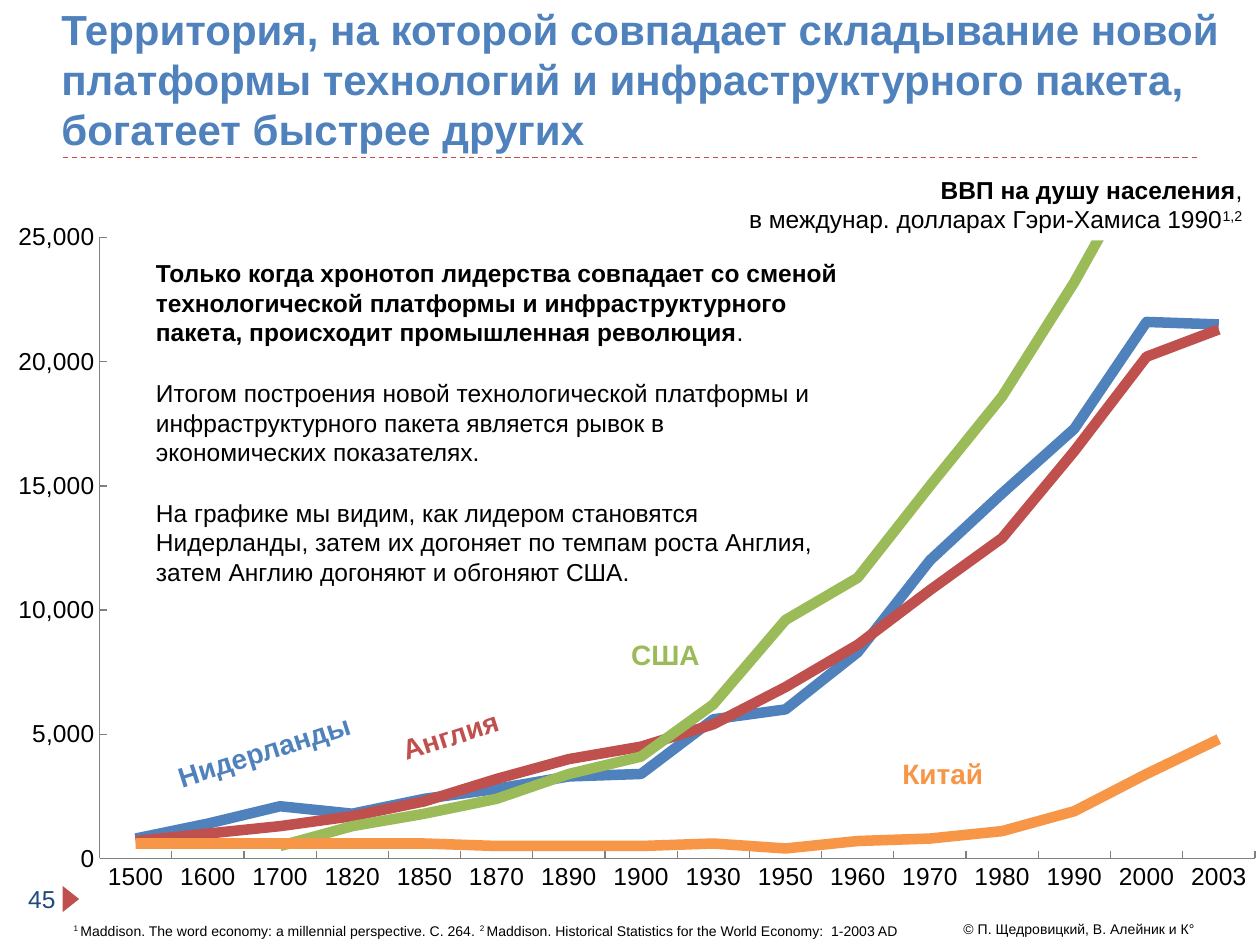
import pptx
import pptx.chart.data
import pptx.dml.color
import pptx.enum.chart
import pptx.enum.dml
import pptx.enum.shapes
import pptx.enum.text
import pptx.oxml
import pptx.oxml.ns
import pptx.util

Pt = pptx.util.Pt
ALIGN = pptx.enum.text.PP_ALIGN
ANCHOR = pptx.enum.text.MSO_ANCHOR
SHAPES = pptx.enum.shapes.MSO_SHAPE
FONT = "Arial"
BLUE, RED, GREEN, ORANGE = "4F81BD", "C0504D", "9BBB59", "F79646"
BLACK, WHITE, NAVY, GREY = "000000", "FFFFFF", "1F497D", "808080"

YEARS = ["1500", "1600", "1700", "1820", "1850", "1870", "1890", "1900",
         "1930", "1950", "1960", "1970", "1980", "1990", "2000", "2003"]
COUNTRIES = [
    ("Нидерланды", BLUE, (87, 415.5, 127.5, 26.5), -17.8,
     [800, 1400, 2100, 1800, 2400, 2800, 3300, 3400,
      5600, 6000, 8300, 12000, 14700, 17300, 21600, 21500]),
    ("Англия", RED, (214.5, 407, 85.5, 26.5), -17.7,
     [700, 1000, 1300, 1700, 2300, 3200, 4000, 4500,
      5400, 6900, 8600, 10800, 12900, 16400, 20200, 21300]),
    ("США", GREEN, (337.5, 361, 85.5, 26.5), 0,
     [None, None, 500, 1300, 1800, 2400, 3400, 4100,
      6200, 9600, 11300, 15000, 18600, 23200, 28400, 29000]),
    ("Китай", ORANGE, (496, 428.5, 85.5, 26.5), 0,
     [600, 600, 600, 600, 600, 500, 500, 500,
      600, 400, 700, 800, 1100, 1900, 3400, 4800]),
]


def colour(value):
    """Return the colour for a hex string."""
    return pptx.dml.color.RGBColor.from_string(value)


def apply(target, formats):
    """Set each attribute named in formats on target."""
    for name, value in formats.items():
        setattr(target, name, value)


def add_text(page, box, paragraphs, size, color=BLACK, bold=False, fill=None,
             align=ALIGN.LEFT, anchor=ANCHOR.TOP, after=0, rotation=0, frame_formats=None):
    """Add a text box; each paragraph is a list of (text, formats) spans."""
    shape = page.shapes.add_textbox(*map(Pt, box))
    shape.rotation = rotation
    if fill:
        shape.fill.solid()
        shape.fill.fore_color.rgb = colour(fill)
    frame = shape.text_frame
    apply(frame, {"word_wrap": True, "vertical_anchor": anchor, **(frame_formats or {})})
    for index, spans in enumerate(paragraphs):
        para = frame.paragraphs[0] if index == 0 else frame.add_paragraph()
        apply(para, {"alignment": align, "space_after": Pt(after)})
        for text, formats in spans:
            span = para.add_run()
            span.text = text
            apply(span.font, {"name": FONT, "size": Pt(size), "bold": formats.get("bold", bold)})
            span.font.color.rgb = colour(color)
            if formats.get("raised"):
                span.font._element.set("baseline", "30000")


def add_header(page, box):
    """Place the title and the dashed rule under it."""
    left, top, width, height = box
    title = ("Территория, на которой совпадает складывание новой платформы технологий "
             "и инфраструктурного пакета, богатеет быстрее других")
    add_text(page, box, [[(title, {})]], 24, BLUE, True, anchor=ANCHOR.MIDDLE)
    rule = page.shapes.add_connector(
        pptx.enum.shapes.MSO_CONNECTOR.STRAIGHT,
        Pt(left + 8), Pt(top + height), Pt(left + 656), Pt(top + height))
    apply(rule.line, {"width": Pt(0.75), "dash_style": pptx.enum.dml.MSO_LINE.DASH})
    rule.line.color.rgb = colour(RED)
    rule._element.spPr.append(pptx.oxml.parse_xml(
        f'<a:effectLst {pptx.oxml.ns.nsdecls("a")}/>'))


def set_plot_layout(chart, x, y, width, height):
    """Fix the inner plot area as fractions of the chart."""
    plot_area = chart._chartSpace.chart.plotArea
    for old in plot_area.findall(pptx.oxml.ns.qn("c:layout")):
        plot_area.remove(old)
    sizes = "".join(f'<c:{name} val="{value}"/>' for name, value in
                    zip("xywh", (x, y, width, height)))
    plot_area.insert(0, pptx.oxml.parse_xml(
        f'<c:layout {pptx.oxml.ns.nsdecls("c")}><c:manualLayout>'
        '<c:layoutTarget val="inner"/><c:xMode val="edge"/><c:yMode val="edge"/>'
        f'{sizes}</c:manualLayout></c:layout>'))


def add_income_chart(page, box):
    """Place the line chart of income per head by country."""
    data = pptx.chart.data.CategoryChartData()
    data.categories = YEARS
    for name, _, _, _, values in COUNTRIES:
        data.add_series(name, values)
    chart = page.shapes.add_chart(
        pptx.enum.chart.XL_CHART_TYPE.LINE, *map(Pt, box), data).chart
    apply(chart, {"has_legend": False, "has_title": False})
    apply(chart.font, {"name": FONT, "size": Pt(14)})
    chart.font.color.rgb = colour(BLACK)
    chart.plots[0].vary_by_categories = False
    for series, country in zip(chart.plots[0].series, COUNTRIES):
        series.smooth = False
        series.marker.style = pptx.enum.chart.XL_MARKER_STYLE.NONE
        series.format.line.width = Pt(6)
        series.format.line.color.rgb = colour(country[1])
    for axis in (chart.category_axis, chart.value_axis):
        apply(axis, {"has_major_gridlines": False,
                     "major_tick_mark": pptx.enum.chart.XL_TICK_MARK.INSIDE,
                     "minor_tick_mark": pptx.enum.chart.XL_TICK_MARK.NONE})
        axis.format.line.width = Pt(0.75)
        axis.format.line.color.rgb = colour(GREY)
    apply(chart.value_axis, {"minimum_scale": 0, "maximum_scale": 25000, "major_unit": 5000})
    apply(chart.value_axis.tick_labels,
          {"number_format": "#,##0", "number_format_is_linked": False})
    set_plot_layout(chart, 0.079, 0.03, 0.917, 0.835)


def add_chart_heading(page, box):
    """Place the measure shown by the chart."""
    add_text(page, box, [
        [("ВВП на душу населения", {"bold": True}), (",", {})],
        [("в междунар. долларах Гэри-Хамиса 1990", {}), ("1,2", {"raised": True})],
    ], 14, fill=WHITE, align=ALIGN.RIGHT)


def add_commentary(page, box):
    """Place the three paragraphs over the chart."""
    add_text(page, box, [
        [("Только когда хронотоп лидерства совпадает со сменой технологической платформы "
          "и инфраструктурного пакета, происходит промышленная революция", {"bold": True}),
         (".", {})],
        [("Итогом построения новой технологической платформы и инфраструктурного пакета "
          "является рывок в экономических показателях.", {})],
        [("На графике мы видим, как лидером становятся Нидерланды, затем их догоняет "
          "по темпам роста Англия, затем Англию догоняют и обгоняют США.", {})],
    ], 14, anchor=ANCHOR.BOTTOM, after=18)


def add_country_labels(page):
    """Name each line in its own colour."""
    for name, color, box, rotation, _ in COUNTRIES:
        add_text(page, box, [[(name, {})]], 16, color, True,
                 align=ALIGN.CENTER, rotation=rotation)


def add_footer(page, box):
    """Place the page number, its marker, the sources and the copyright."""
    left, top, _, _ = box
    marker = page.shapes.add_shape(SHAPES.ISOSCELES_TRIANGLE, Pt(left + 33), Pt(top + 10),
                                   Pt(15), Pt(9.5))
    apply(marker, {"rotation": 90})
    marker.shadow.inherit = False
    marker.fill.solid()
    marker.fill.fore_color.rgb = colour(RED)
    marker.line.fill.background()
    add_text(page, (left + 9, top, 33, 29), [[("45", {})]], 14, NAVY, anchor=ANCHOR.MIDDLE)
    add_text(page, (left + 35, top + 23.5, 487, 17.5), [[
        ("1 ", {"raised": True}),
        ("Maddison. The word economy: а millennial perspective. С. 264. ", {}),
        ("2 ", {"raised": True}),
        ("Maddison. Historical Statistics for the World Economy:  1-2003 AD", {}),
    ]], 8, fill=WHITE, anchor=ANCHOR.BOTTOM, frame_formats={"margin_right": 0})
    add_text(page, (left + 543.5, top + 23.5, 174, 17.5),
             [[("© П. Щедровицкий, В. Алейник и К°", {})]], 8)


def main():
    """Build the slide and save the deck."""
    deck = pptx.Presentation()
    apply(deck, {"slide_width": Pt(720), "slide_height": Pt(540)})
    page = deck.slides.add_slide(deck.slide_layouts[6])
    add_income_chart(page, (0, 123, 720, 425))
    add_header(page, (28, 0, 692, 90))
    add_chart_heading(page, (245, 96.5, 472, 41))
    add_commentary(page, (82, 142, 405.5, 196.5))
    add_country_labels(page)
    add_footer(page, (0, 499, 720, 41))
    deck.save("out.pptx")


if __name__ == "__main__":
    main()
